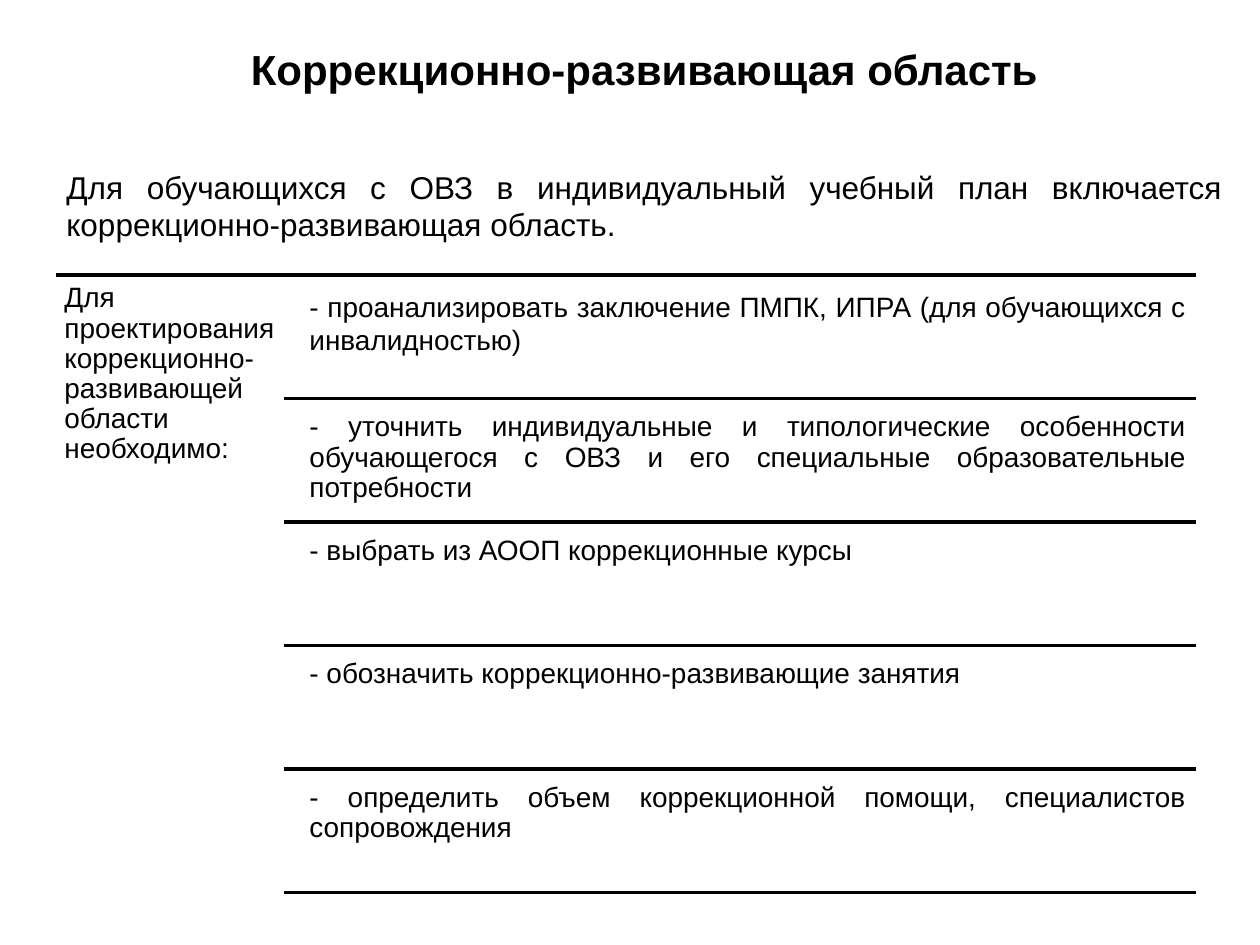
from dataclasses import dataclass
from lxml.etree import SubElement
from pptx import Presentation
from pptx.dml.color import RGBColor
from pptx.enum.shapes import MSO_CONNECTOR
from pptx.enum.text import PP_ALIGN
from pptx.oxml.ns import qn
from pptx.util import Cm, Pt


@dataclass
class Theme:
    ink: RGBColor = RGBColor(0, 0, 0)
    font: str = "Arial"
    title: int = 24
    lead: int = 18
    body: int = 16
    rule: int = 2


theme = Theme()


def write(root, text, box, size, align=PP_ALIGN.JUSTIFY, bold=False,
          inset=(0.25, 0.13), lead=None, after=0):
    frame = root.add_textbox(*map(Cm, box)).text_frame
    frame.word_wrap = True
    frame.margin_left = frame.margin_right = Cm(inset[0])
    frame.margin_top = frame.margin_bottom = Cm(inset[1])
    para = frame.paragraphs[0]
    para.alignment = align
    para.space_after = Pt(after)
    if lead:
        para.line_spacing = lead
    run = para.add_run()
    run.text = text
    run.font.name = theme.font
    run.font.size = Pt(size)
    run.font.bold = bold
    run.font.color.rgb = theme.ink


def rule(root, left, right, y):
    line = root.add_connector(MSO_CONNECTOR.STRAIGHT, Cm(left), Cm(y), Cm(right), Cm(y))
    line.line.color.rgb = theme.ink
    line.line.width = Pt(theme.rule)
    SubElement(line._element.spPr, qn("a:effectLst"))


deck = Presentation()
deck.slide_width, deck.slide_height = Cm(25.4), Cm(19.05)
page = deck.slides.add_slide(deck.slide_layouts[6])

write(page.shapes, "Для обучающихся с ОВЗ в индивидуальный учебный план включается "
      "коррекционно-развивающая область.", (1.09, 3.25, 23.8, 1.8), theme.lead)
write(page.shapes, "Коррекционно-развивающая область", (2.49, 0.74, 21, 1.27),
      theme.title, align=PP_ALIGN.CENTER, bold=True)

left, split, right = 1.12, 5.72, 24.1
top, step, gap = 5.54, 2.49, 0.11
pad = (0.18, 0.18)
tight = {"lead": 0.9, "after": 5.6}
steps = [
    "- проанализировать заключение ПМПК, ИПРА (для обучающихся с инвалидностью)",
    "- уточнить индивидуальные и типологические особенности обучающегося с ОВЗ "
    "и его специальные образовательные потребности",
    "- выбрать из АООП коррекционные курсы",
    "- обозначить коррекционно-развивающие занятия",
    "- определить объем коррекционной помощи, специалистов сопровождения",
]

group = page.shapes.add_group_shape().shapes
rule(group, left, right, top)
write(group, "Для проектирования коррекционно-развивающей области необходимо:",
      (left, top, split - left, step * len(steps)), theme.body, inset=pad, **tight)
for row, text in enumerate(steps):
    y = top + row * step
    form = tight if row else {}
    write(group, text, (6.06, y + gap, 18.03, step - gap), theme.body, inset=pad, **form)
    rule(group, split, right, y + step)

deck.save("out.pptx")
